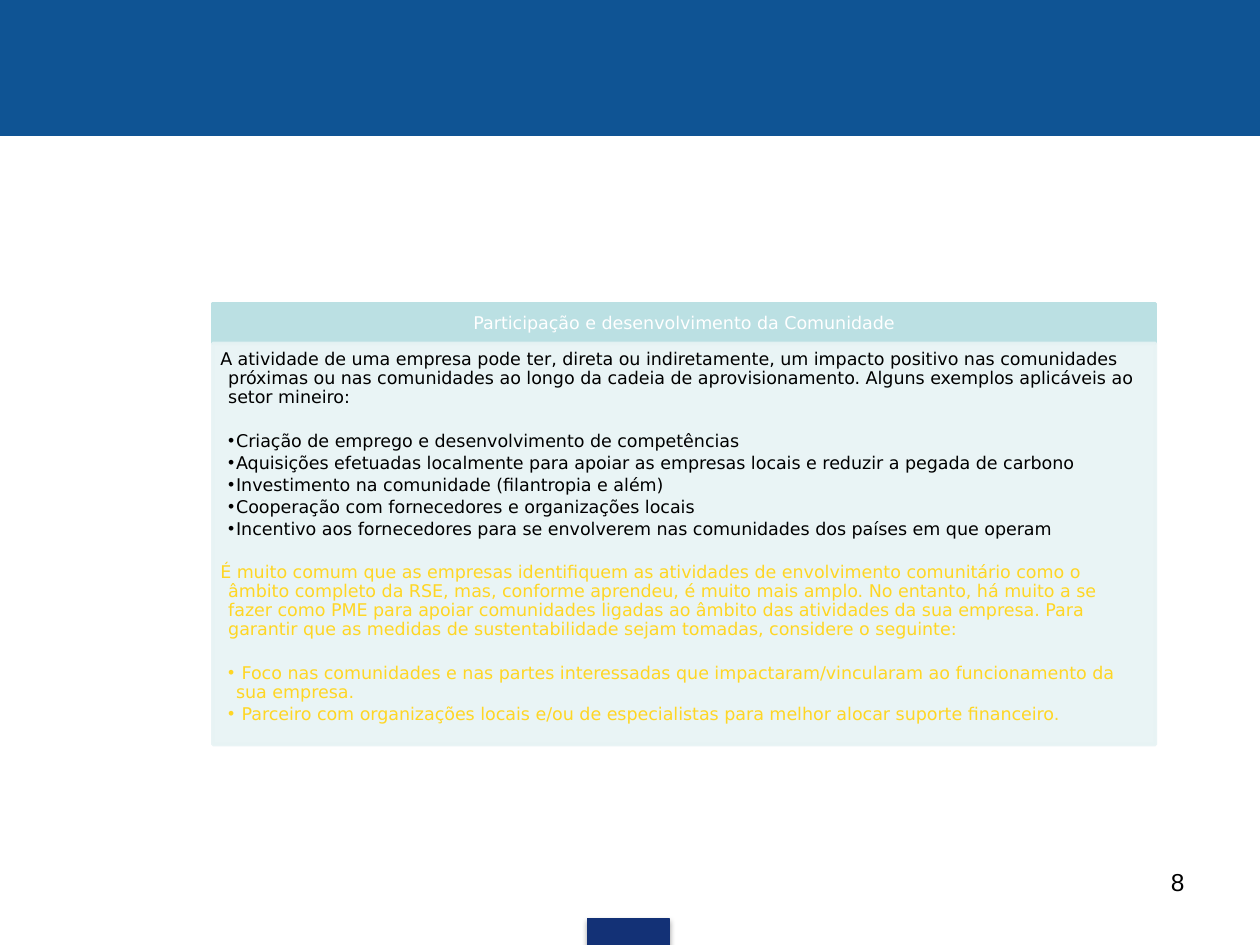
from dataclasses import dataclass

import pptx
import pptx.dml.color
import pptx.enum.shapes
import pptx.enum.text
import pptx.oxml
import pptx.oxml.ns
import pptx.util
from lxml import etree
from pptx.util import Cm

ALIGN = pptx.enum.text.PP_ALIGN
ANCHOR = pptx.enum.text.MSO_ANCHOR


@dataclass(frozen=True)
class Theme:
    """Colours, fonts and type sizes of the slide."""
    band: str = "0F5494"
    tab: str = "133176"
    heading_fill: str = "BBE0E3"
    panel_fill: str = "E7F3F4"
    light: str = "FFFFFF"
    dark: str = "000000"
    accent: str = "FFD624"
    text_font: str = "DejaVu Sans"
    number_font: str = "Arial"
    text_size: float = 10
    number_size: float = 14


@dataclass(frozen=True)
class Box:
    """A rectangle in centimetres."""
    left: float
    top: float
    width: float
    height: float

    def lengths(self):
        """Return the four lengths ready for a shape."""
        return Cm(self.left), Cm(self.top), Cm(self.width), Cm(self.height)


THEME = Theme()
HEADING = "Participação e desenvolvimento da Comunidade"
SECTIONS = [
    (THEME.dark,
     "A atividade de uma empresa pode ter, direta ou indiretamente, um impacto positivo nas "
     "comunidades próximas ou nas comunidades ao longo da cadeia de aprovisionamento. Alguns "
     "exemplos aplicáveis ao setor mineiro:",
     ["Criação de emprego e desenvolvimento de competências",
      "Aquisições efetuadas localmente para apoiar as empresas locais e reduzir a pegada de carbono",
      "Investimento na comunidade (filantropia e além)",
      "Cooperação com fornecedores e organizações locais",
      "Incentivo aos fornecedores para se envolverem nas comunidades dos países em que operam"]),
    (THEME.accent,
     "É muito comum que as empresas identifiquem as atividades de envolvimento comunitário como o "
     "âmbito completo da RSE, mas, conforme aprendeu, é muito mais amplo. No entanto, há muito a se "
     "fazer como PME para apoiar comunidades ligadas ao âmbito das atividades da sua empresa. Para "
     "garantir que as medidas de sustentabilidade sejam tomadas, considere o seguinte:",
     [" Foco nas comunidades e nas partes interessadas que impactaram/vincularam ao funcionamento "
      "da sua empresa.",
      " Parceiro com organizações locais e/ou de especialistas para melhor alocar suporte "
      "financeiro."]),
]


def paint(shape, colour, line_width, opacity=100):
    """Give a shape one colour for fill and line."""
    rgb = pptx.dml.color.RGBColor.from_string(colour)
    shape.fill.solid()
    shape.fill.fore_color.rgb = rgb
    shape.line.color.rgb = rgb
    shape.line.width = pptx.util.Pt(line_width)
    if opacity < 100:
        for tint in shape.element.spPr.iter(pptx.oxml.ns.qn("a:srgbClr")):
            etree.SubElement(tint, pptx.oxml.ns.qn("a:alpha"), val=str(opacity * 1000))


def place(shape, box):
    """Move a shape to a box."""
    shape.left, shape.top, shape.width, shape.height = box.lengths()


def set_frame(frame, insets, anchor):
    """Set the insets (left, top, right, bottom) and anchor of a text frame."""
    frame.word_wrap = True
    frame.auto_size = pptx.enum.text.MSO_AUTO_SIZE.NONE
    frame.vertical_anchor = anchor
    (frame.margin_left, frame.margin_top,
     frame.margin_right, frame.margin_bottom) = map(Cm, insets)


def write(paragraph, text, *, colour, font=THEME.text_font, size=THEME.text_size,
          align=ALIGN.LEFT, spacing=0.9, before=0, after=0, margin=0, hanging=0, bullet=None):
    """Write formatted text into a paragraph."""
    properties = paragraph._p.get_or_add_pPr()
    properties.set("marL", str(Cm(margin)))
    properties.set("indent", str(-Cm(hanging)))
    if bullet:
        etree.SubElement(properties, pptx.oxml.ns.qn("a:buChar"), char=bullet)
    else:
        etree.SubElement(properties, pptx.oxml.ns.qn("a:buNone"))
    paragraph.alignment = align
    paragraph.line_spacing = spacing
    paragraph.space_before = pptx.util.Pt(before)
    paragraph.space_after = pptx.util.Pt(after)
    run = paragraph.add_run()
    run.text = text
    run.font.name = font
    run.font.size = pptx.util.Pt(size)
    run.font.color.rgb = pptx.dml.color.RGBColor.from_string(colour)


def add_block(slide, box, colour):
    """Add a plain rectangle in one colour."""
    block = slide.shapes.add_shape(pptx.enum.shapes.MSO_SHAPE.RECTANGLE, *box.lengths())
    block.shadow.inherit = False
    paint(block, colour, 0.75)
    return block


def add_footer_tab(slide, box):
    """Add the small tab with its soft shadow at the foot of the slide."""
    tab = add_block(slide, box, THEME.tab)
    effects = tab.element.spPr.find(pptx.oxml.ns.qn("a:effectLst"))
    effects.append(pptx.oxml.parse_xml(
        f'<a:outerShdw {pptx.oxml.ns.nsdecls("a")} blurRad="40000" dist="23000" dir="5400000" '
        'rotWithShape="0"><a:srgbClr val="000000"><a:alpha val="35000"/></a:srgbClr>'
        '</a:outerShdw>'))


def fill_community_card(slide, box, heading_height=0.8):
    """Set the heading and the list below it as one card."""
    heading, panel = slide.shapes.title, slide.placeholders[1]
    place(heading, Box(box.left, box.top, box.width, heading_height))
    paint(heading, THEME.heading_fill, 2)
    set_frame(heading.text_frame, (0.2, 0.1, 0.2, 0.1), ANCHOR.MIDDLE)
    write(heading.text_frame.paragraphs[0], HEADING, colour=THEME.light, align=ALIGN.CENTER)

    place(panel, Box(box.left, box.top + heading_height, box.width, box.height - heading_height))
    paint(panel, THEME.panel_fill, 2, opacity=90)
    frame = panel.text_frame
    set_frame(frame, (0.15, 0.15, 0.2, 0.23), ANCHOR.TOP)
    gap = 12.3
    for section, (colour, intro, points) in enumerate(SECTIONS):
        paragraph = frame.add_paragraph() if section else frame.paragraphs[0]
        write(paragraph, intro, colour=colour, margin=0.16, hanging=0.16,
              before=gap if section else 0, after=1.75)
        for index, point in enumerate(points):
            paragraph = frame.add_paragraph()
            paragraph.level = 1
            write(paragraph, point, colour=colour, margin=0.32, hanging=0.16, bullet="•",
                  before=0 if index else gap, after=1.75)


def add_page_number(slide, box, number):
    """Add the page number, set to the right."""
    frame = slide.shapes.add_textbox(*box.lengths()).text_frame
    set_frame(frame, (0.25, 0.13, 0.25, 0.13), ANCHOR.TOP)
    write(frame.paragraphs[0], number, colour=THEME.dark, font=THEME.number_font,
          size=THEME.number_size, align=ALIGN.RIGHT, spacing=1.0)


def main():
    """Build and save the slide."""
    deck = pptx.Presentation()
    deck.slide_width, deck.slide_height = Cm(25.4), Cm(19.05)
    slide = deck.slides.add_slide(deck.slide_layouts[1])
    add_block(slide, Box(0, 0, 25.4, 2.74), THEME.band)
    add_footer_tab(slide, Box(11.84, 18.52, 1.65, 0.55))
    fill_community_card(slide, Box(4.29, 6.12, 19, 8.89))
    add_page_number(slide, Box(18.21, 17.35, 5.92, 1.32), "8")
    deck.save("out.pptx")


if __name__ == "__main__":
    main()
